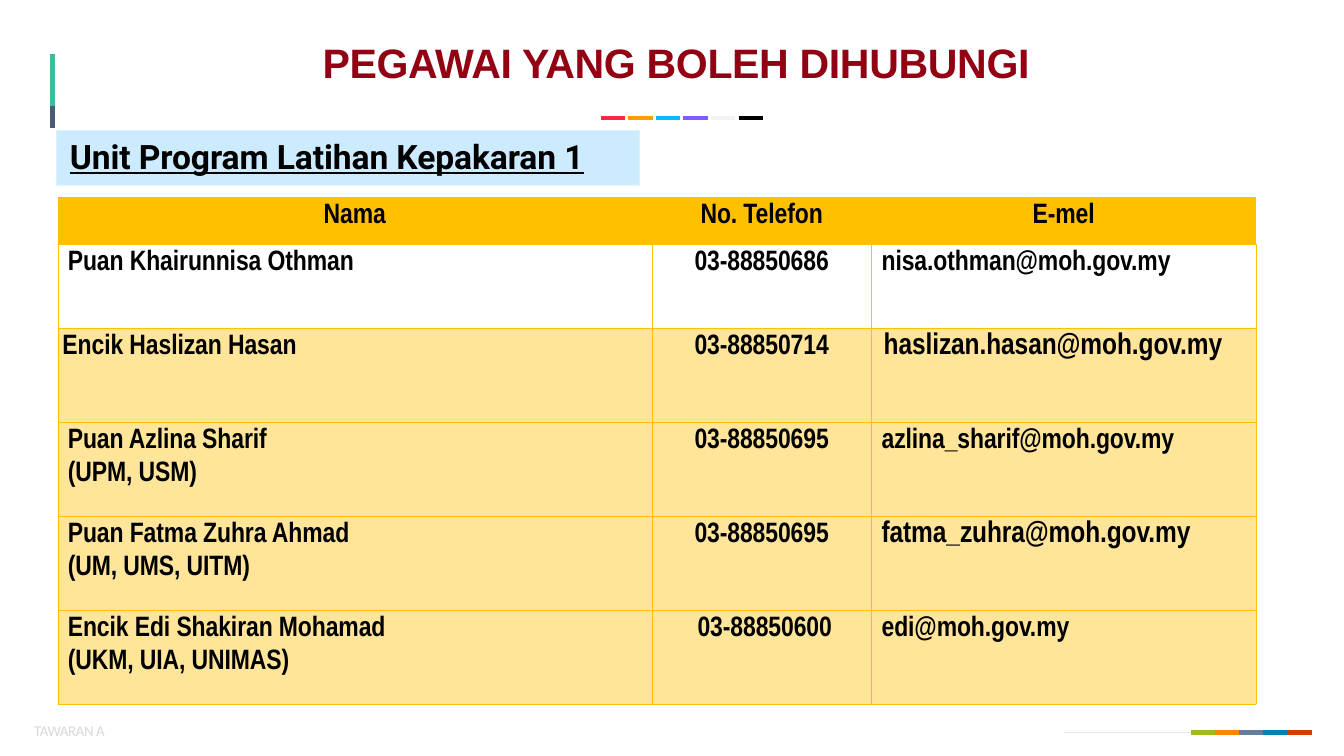
"""Build the slide listing the officers to contact in the specialist training unit."""

from dataclasses import dataclass
from typing import Any, Optional

import lxml.etree
import pptx
import pptx.dml.color
import pptx.enum.shapes
import pptx.enum.text
import pptx.oxml.ns
import pptx.util

Inches = pptx.util.Inches
Pt = pptx.util.Pt
qn = pptx.oxml.ns.qn
ALIGN = pptx.enum.text.PP_ALIGN

COLOURS = {
    "title": "920013", "ink": "000000", "footer": "D9D9D9",
    "unit": "CCEBFF", "gold": "FFC000",
    "teal": "3CBE9C", "slate": "4A5C74", "hairline": "E6E6E6",
    "red": "FF2744", "orange": "FF9E01", "sky": "07BCF9",
    "violet": "815BFF", "pale": "F3F3F3", "black": "000000",
    "lime": "A0BB1F", "amber": "FF8504", "steel": "647C9D",
    "ocean": "0084AA", "rust": "D63B04",
}
DASH_WIDTH = 0.36
COLUMN_WIDTHS = (8.84, 3.27, 5.72)
ROW_HEIGHTS = (0.7, 1.25, 1.4, 1.4, 1.4, 1.4)


@dataclass
class Officer:
    """One officer, with the indents and e-mail size of the table row."""

    names: tuple[str, ...]
    phone: str
    email: str
    name_indent: float = 0.15
    phone_indent: float = 0
    email_indent: float = 0.15
    email_size: float = 30


@dataclass
class DashRow:
    """A row of equal coloured dashes."""

    left: float
    top: float
    pitch: float
    weight: float
    colours: tuple[str, ...]


OFFICERS = (
    Officer(("Puan Khairunnisa Othman",), "03-88850686", "nisa.othman@moh.gov.my"),
    Officer(("Encik Haslizan Hasan",), "03-88850714", "haslizan.hasan@moh.gov.my",
            name_indent=0.07, email_indent=0.18, email_size=32),
    Officer(("Puan Azlina Sharif", "(UPM, USM)"), "03-88850695", "azlina_sharif@moh.gov.my"),
    Officer(("Puan Fatma Zuhra Ahmad", "(UM, UMS, UITM)"), "03-88850695",
            "fatma_zuhra@moh.gov.my", email_size=32),
    Officer(("Encik Edi Shakiran Mohamad", "(UKM, UIA, UNIMAS)"), "03-88850600",
            "edi@moh.gov.my", phone_indent=0.09),
)
DASH_ROWS = (
    DashRow(17.72, 10.9, 0.36, 5.4, ("lime", "amber", "steel", "ocean", "rust")),
    DashRow(8.94, 1.76, 0.41, 4.32, ("red", "orange", "sky", "violet", "pale", "black")),
)


def rgb(colour: str) -> pptx.dml.color.RGBColor:
    """Return a named colour."""
    return pptx.dml.color.RGBColor.from_string(COLOURS[colour])


def write_text(frame: Any, *lines: str, font: str, size: float, colour: str = "ink",
               bold: bool = True, underline: bool = False, align: Any = ALIGN.LEFT,
               indent: float = 0, before: float = 0, leading: Optional[float] = None,
               tracking: float = 0) -> None:
    """Write one paragraph per line into a text frame."""
    for index, line in enumerate(lines):
        paragraph = frame.add_paragraph() if index else frame.paragraphs[0]
        paragraph.alignment = align
        paragraph.space_before = Pt(before)
        if leading:
            paragraph.line_spacing = Pt(leading)
        properties = paragraph._p.get_or_add_pPr()
        properties.set("marL", str(Inches(indent)))
        properties.set("indent", "0")
        run = paragraph.add_run()
        run.text = line
        run.font.name, run.font.size = font, Pt(size)
        run.font.bold, run.font.underline = bold, underline
        run.font.color.rgb = rgb(colour)
        run._r.get_or_add_rPr().set("spc", str(round(tracking * 100)))


def fit_frame(frame: Any, top_inset: float = 0.01) -> None:
    """Wrap a text frame from the top, with only a top inset."""
    frame.word_wrap = True
    frame.auto_size = pptx.enum.text.MSO_AUTO_SIZE.SHAPE_TO_FIT_TEXT
    frame.vertical_anchor = pptx.enum.text.MSO_ANCHOR.TOP
    frame.margin_left = frame.margin_right = frame.margin_bottom = 0
    frame.margin_top = Inches(top_inset)


def draw_line(slide: Any, start: tuple[float, float], end: tuple[float, float],
              colour: str, weight: float) -> None:
    """Draw a plain straight line."""
    line = slide.shapes.add_connector(
        pptx.enum.shapes.MSO_CONNECTOR.STRAIGHT, *map(Inches, start + end))
    line.line.color.rgb = rgb(colour)
    line.line.width = Pt(weight)
    lxml.etree.SubElement(line._element.spPr, qn("a:effectLst"))


def draw_dashes(slide: Any, row: DashRow) -> None:
    """Draw a row of dashes from left to right."""
    for index, colour in enumerate(row.colours):
        left = row.left + index * row.pitch
        draw_line(slide, (left, row.top), (left + DASH_WIDTH, row.top), colour, row.weight)


def style_cell(cell: Any, header: bool, shade: Optional[int]) -> None:
    """Set a cell's margins, borders and fill, with the shade as percent opacity."""
    cell.margin_left = cell.margin_right = cell.margin_top = cell.margin_bottom = 0
    properties = cell._tc.get_or_add_tcPr()
    for side in ("lnL", "lnR", "lnT", "lnB"):
        border = lxml.etree.SubElement(properties, qn(f"a:{side}"), w=str(Pt(0.5)))
        if header:
            lxml.etree.SubElement(border, qn("a:noFill"))
        else:
            solid = lxml.etree.SubElement(border, qn("a:solidFill"))
            lxml.etree.SubElement(solid, qn("a:srgbClr"), val=COLOURS["gold"])
    if shade is None:
        cell.fill.background()
        return
    cell.fill.solid()
    cell.fill.fore_color.rgb = rgb("gold")
    if shade < 100:
        colour = properties.find(qn("a:solidFill")).find(qn("a:srgbClr"))
        lxml.etree.SubElement(colour, qn("a:alpha"), val=str(shade * 1000))


def draw_contacts(slide: Any) -> None:
    """Draw the table of officers."""
    contacts = slide.shapes.add_table(
        len(ROW_HEIGHTS), len(COLUMN_WIDTHS), Inches(0.86), Inches(2.93),
        Inches(sum(COLUMN_WIDTHS)), Inches(sum(ROW_HEIGHTS))).table
    contacts.horz_banding = False
    for column, width in zip(contacts.columns, COLUMN_WIDTHS):
        column.width = Inches(width)
    for row, height in zip(contacts.rows, ROW_HEIGHTS):
        row.height = Inches(height)
    cell_format = {"font": "Arial Narrow", "leading": 35, "tracking": -0.1}
    for index, heading in enumerate(("Nama", "No. Telefon", "E-mel")):
        cell = contacts.cell(0, index)
        style_cell(cell, True, 100)
        write_text(cell.text_frame, heading, size=30, align=ALIGN.CENTER, **cell_format)
    for index, officer in enumerate(OFFICERS, start=1):
        name, phone, email = contacts.rows[index].cells
        for cell in (name, phone, email):
            style_cell(cell, False, None if index == 1 else 40)
        write_text(name.text_frame, *officer.names, size=30,
                   indent=officer.name_indent, **cell_format)
        write_text(phone.text_frame, officer.phone, size=30, align=ALIGN.CENTER,
                   indent=officer.phone_indent, **cell_format)
        write_text(email.text_frame, officer.email, size=officer.email_size,
                   indent=officer.email_indent, **cell_format)


def main() -> None:
    """Build and save the slide."""
    deck = pptx.Presentation()
    deck.slide_width, deck.slide_height = Inches(20), Inches(11.25)
    slide = deck.slides.add_slide(deck.slide_layouts[5])

    title = slide.shapes.title
    title.left, title.top, title.width, title.height = map(Inches, (4.79, 0.55, 10.69, 0.76))
    fit_frame(title.text_frame)
    write_text(title.text_frame, "PEGAWAI YANG BOLEH DIHUBUNGI", font="Arial", size=44,
               colour="title", indent=0.01, before=1, tracking=-0.4)

    draw_line(slide, (17.73, 10.9), (15.84, 10.9), "hairline", 0.48)
    draw_line(slide, (0.78, 0.81), (0.78, 1.91), "teal", 5.4)
    draw_line(slide, (0.78, 1.58), (0.78, 1.91), "slate", 5.4)
    for row in DASH_ROWS:
        draw_dashes(slide, row)

    footer = slide.shapes.add_textbox(*map(Inches, (0.5, 10.73, 1.13, 0.29))).text_frame
    fit_frame(footer)
    write_text(footer, "TAWARAN A", font="Calibri", size=16, colour="footer", bold=False,
               indent=0.01, before=0.9, tracking=-0.4)

    draw_contacts(slide)

    unit = slide.shapes.add_shape(pptx.enum.shapes.MSO_SHAPE.RECTANGLE,
                                  *map(Inches, (0.84, 1.94, 8.68, 0.82)))
    unit.shadow.inherit = False
    unit.fill.solid()
    unit.fill.fore_color.rgb = rgb("unit")
    unit.line.fill.background()
    fit_frame(unit.text_frame, 0.08)
    write_text(unit.text_frame, "Unit Program Latihan Kepakaran 1", font="Roboto", size=36,
               underline=True, indent=0.2, before=6, tracking=-0.1)
    deck.save("out.pptx")


if __name__ == "__main__":
    main()
